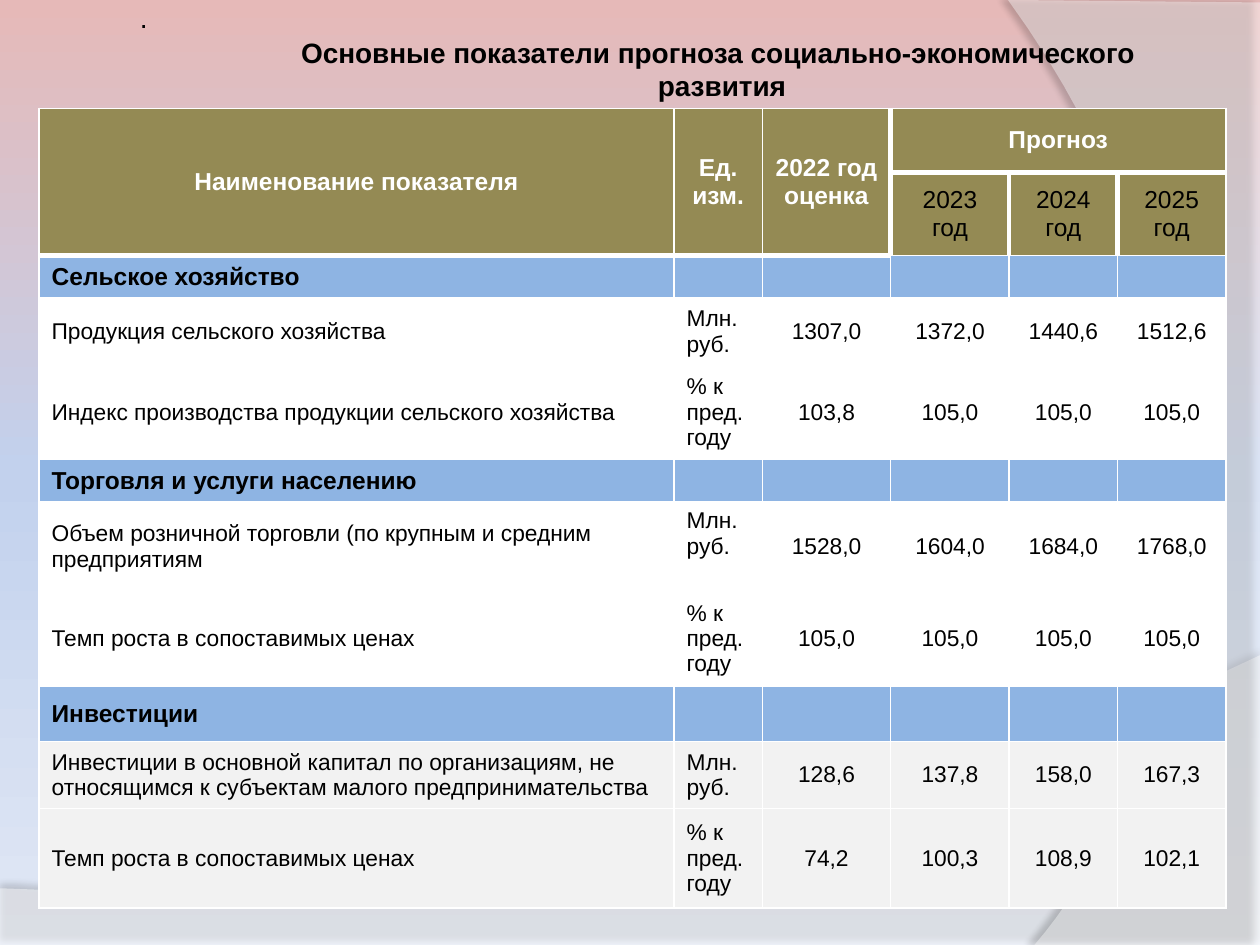
from lxml import etree
from pptx import Presentation
from pptx.dml.color import RGBColor
from pptx.enum.text import MSO_ANCHOR, PP_ALIGN
from pptx.oxml import parse_xml
from pptx.oxml.ns import nsdecls, qn
from pptx.util import Inches, Pt

LEFT, CENTER = PP_ALIGN.LEFT, PP_ALIGN.CENTER
MIDDLE, TOP = MSO_ANCHOR.MIDDLE, MSO_ANCHOR.TOP

BLACK, WHITE, OLIVE, BLUE, GREY = "000000", "FFFFFF", "948A54", "8EB4E3", "F2F2F2"
BACKDROP = [(0, "E6B9B8"), (50, "C2D1ED"), (100, "E1E8F5")]

COLUMN_WIDTHS = [5.04, 0.7, 1.02, 0.94, 0.86, 0.86]
ROW_HEIGHTS = [0.51, 0.66, 0.32, 0.53, 0.71, 0.33, 0.71, 0.71, 0.44, 0.51, 0.79]
HEADER_MERGES = [(0, 0, 1, 0), (0, 1, 1, 1), (0, 2, 1, 2), (0, 3, 0, 5)]
HEADER = [
    ["Наименование показателя", "Ед.\nизм.", "2022 год оценка", "Прогноз", "", ""],
    ["", "", "", "2023 год", "2024 год", "2025 год"],
]
THICK_SIDES = {
    (0, 0): "B", (0, 1): "B", (0, 2): "RB", (0, 3): "LB", (0, 4): "B", (0, 5): "B",
    (1, 0): "B", (1, 1): "B", (1, 2): "RB",
    (1, 3): "LTR", (1, 4): "LTR", (1, 5): "LT",
}
PERCENT = "% к пред.году"
SECTIONS = [
    ("Сельское хозяйство", WHITE, [
        ["Продукция сельского хозяйства", "Млн.\nруб.",
         "1307,0", "1372,0", "1440,6", "1512,6"],
        ["Индекс производства продукции сельского хозяйства", PERCENT,
         "103,8", "105,0", "105,0", "105,0"],
    ]),
    ("Торговля и услуги населению", WHITE, [
        ["Объем розничной торговли (по крупным и средним предприятиям", "Млн.руб.",
         "1528,0", "1604,0", "1684,0", "1768,0"],
        ["Темп роста в сопоставимых ценах", PERCENT,
         "105,0", "105,0", "105,0", "105,0"],
    ]),
    ("Инвестиции", GREY, [
        ["Инвестиции в основной капитал по организациям, не относящимся "
         "к субъектам малого предпринимательства", "Млн.руб.",
         "128,6", "137,8", "158,0", "167,3"],
        ["Темп роста в сопоставимых ценах", PERCENT,
         "74,2", "100,3", "108,9", "102,1"],
    ]),
]
UPPER_UNIT = (6, 1)


def rgb(color):
    return RGBColor.from_string(color)


def bezier(start, first, second, end, steps=40):
    for step in range(1, steps + 1):
        t = step / steps
        weights = ((1 - t) ** 3, 3 * t * (1 - t) ** 2, 3 * t * t * (1 - t), t ** 3)
        yield tuple(
            sum(w * p[axis] for w, p in zip(weights, (start, first, second, end)))
            for axis in (0, 1)
        )


class SlideBuilder:
    font_name = "Arial"

    def __init__(self, slide):
        self.slide = slide

    def background(self, stops):
        fill = self.slide.background.fill
        fill.gradient()
        fill.gradient_angle = 270
        stop_list = self.slide.element.find(".//" + qn("a:gsLst"))
        for stop in list(stop_list):
            stop_list.remove(stop)
        for position, color in stops:
            stop = etree.SubElement(stop_list, qn("a:gs"), pos=str(position * 1000))
            etree.SubElement(stop, qn("a:srgbClr"), val=color)

    def wave(self, points, opacity, shadow_opacity, distance, angle):
        outline = self.slide.shapes.build_freeform(
            *(Inches(v) for v in points[0]), scale=1.0)
        outline.add_line_segments([(Inches(x), Inches(y)) for x, y in points[1:]])
        shape = outline.convert_to_shape()
        shape.fill.solid()
        shape.fill.fore_color.rgb = rgb(WHITE)
        shape.line.fill.background()
        properties = shape.element.spPr
        color = properties.find(qn("a:solidFill") + "/" + qn("a:srgbClr"))
        etree.SubElement(color, qn("a:alpha"), val=str(opacity * 1000))
        properties.append(parse_xml(
            f'<a:effectLst {nsdecls("a")}><a:outerShdw blurRad="{Pt(4)}" '
            f'dist="{Pt(distance)}" dir="{angle * 60000}" algn="ctr" rotWithShape="0">'
            f'<a:srgbClr val="{BLACK}"><a:alpha val="{shadow_opacity * 1000}"/>'
            '</a:srgbClr></a:outerShdw></a:effectLst>'))

    def fill_frame(self, frame, text, size, color=BLACK, bold=False, align=LEFT):
        frame.text = text
        formats = {"name": self.font_name, "size": Pt(size), "bold": bold}
        for paragraph in frame.paragraphs:
            paragraph.alignment = align
            for run in paragraph.runs:
                for attribute, value in formats.items():
                    setattr(run.font, attribute, value)
                run.font.color.rgb = rgb(color)

    def text(self, box, text, anchor=TOP, margins=None, **style):
        frame = self.slide.shapes.add_textbox(*map(Inches, box)).text_frame
        for attribute, value in (margins or {}).items():
            setattr(frame, attribute, Inches(value))
        frame.word_wrap = True
        frame.vertical_anchor = anchor
        self.fill_frame(frame, text, **style)

    def cell(self, cell, text, fill, thick="", anchor=MIDDLE, **style):
        properties = cell._tc.get_or_add_tcPr()
        for side in "LRTB":
            width = Pt(3 if side in thick else 1)
            border = etree.SubElement(properties, qn("a:ln" + side), w=str(width))
            paint = etree.SubElement(border, qn("a:solidFill"))
            etree.SubElement(paint, qn("a:srgbClr"), val=WHITE)
        cell.fill.solid()
        cell.fill.fore_color.rgb = rgb(fill)
        cell.vertical_anchor = anchor
        self.fill_frame(cell.text_frame, text, **style)
        if not text:
            paragraph = cell.text_frame.paragraphs[0]._p
            etree.SubElement(paragraph, qn("a:endParaRPr"), sz=str(style["size"] * 100))

    def table(self, left, top, widths, heights):
        table = self.slide.shapes.add_table(
            len(heights), len(widths), Inches(left), Inches(top),
            Inches(sum(widths)), Inches(sum(heights))).table
        table.first_row = table.horz_banding = False
        for column, width in zip(table.columns, widths):
            column.width = Inches(width)
        for row, height in zip(table.rows, heights):
            row.height = Inches(height)
        return table


def fill_indicators(builder, table):
    for r, labels in enumerate(HEADER):
        for c, label in enumerate(labels):
            builder.cell(table.cell(r, c), label, OLIVE, THICK_SIDES[r, c], size=14,
                         color=BLACK if r else WHITE, bold=r == 0, align=CENTER)
    for top, left, bottom, right in HEADER_MERGES:
        table.cell(top, left).merge(table.cell(bottom, right))

    r = len(HEADER)
    for section, fill, indicators in SECTIONS:
        for c in range(len(COLUMN_WIDTHS)):
            builder.cell(table.cell(r, c), "" if c else section, BLUE, size=14, bold=True)
        for r, indicator in enumerate(indicators, r + 1):
            for c, value in enumerate(indicator):
                builder.cell(table.cell(r, c), value, fill, size=13,
                             anchor=TOP if (r, c) == UPPER_UNIT else MIDDLE,
                             align=CENTER if c > 1 else LEFT)
        r += 1


def main():
    presentation = Presentation()
    presentation.slide_width, presentation.slide_height = Inches(10), Inches(7.5)
    builder = SlideBuilder(presentation.slides.add_slide(presentation.slide_layouts[6]))
    builder.background(BACKDROP)
    builder.wave([(0, 7.05), (0, 7.51), (10, 7.51), (10, 5.2),
                  *bezier((10, 5.2), (5.59, 7.29), (3.91, 7.19), (0, 7.05))],
                 45, 35, 3.5, 270)
    builder.wave([(10, 0.02), (10, 7.5), (8.21, 7.5),
                  *bezier((8.21, 7.5), (9.35, 6.19), (10.18, 3), (8, 0)), (10, 0.02)],
                 40, 45, 4, 180)
    builder.text((1.06, 0, 4.96, 0.27), ".", MIDDLE, size=16, margins={
        "margin_left": 0.05, "margin_right": 0.05, "margin_top": 0, "margin_bottom": 0})
    indicators = builder.table(0.31, 0.86, COLUMN_WIDTHS, ROW_HEIGHTS)
    fill_indicators(builder, indicators)
    builder.text((1.56, 0.23, 8.28, 0.64),
                 "Основные показатели прогноза социально-экономического\n развития",
                 size=16, bold=True, align=CENTER)
    presentation.save("out.pptx")


if __name__ == "__main__":
    main()
